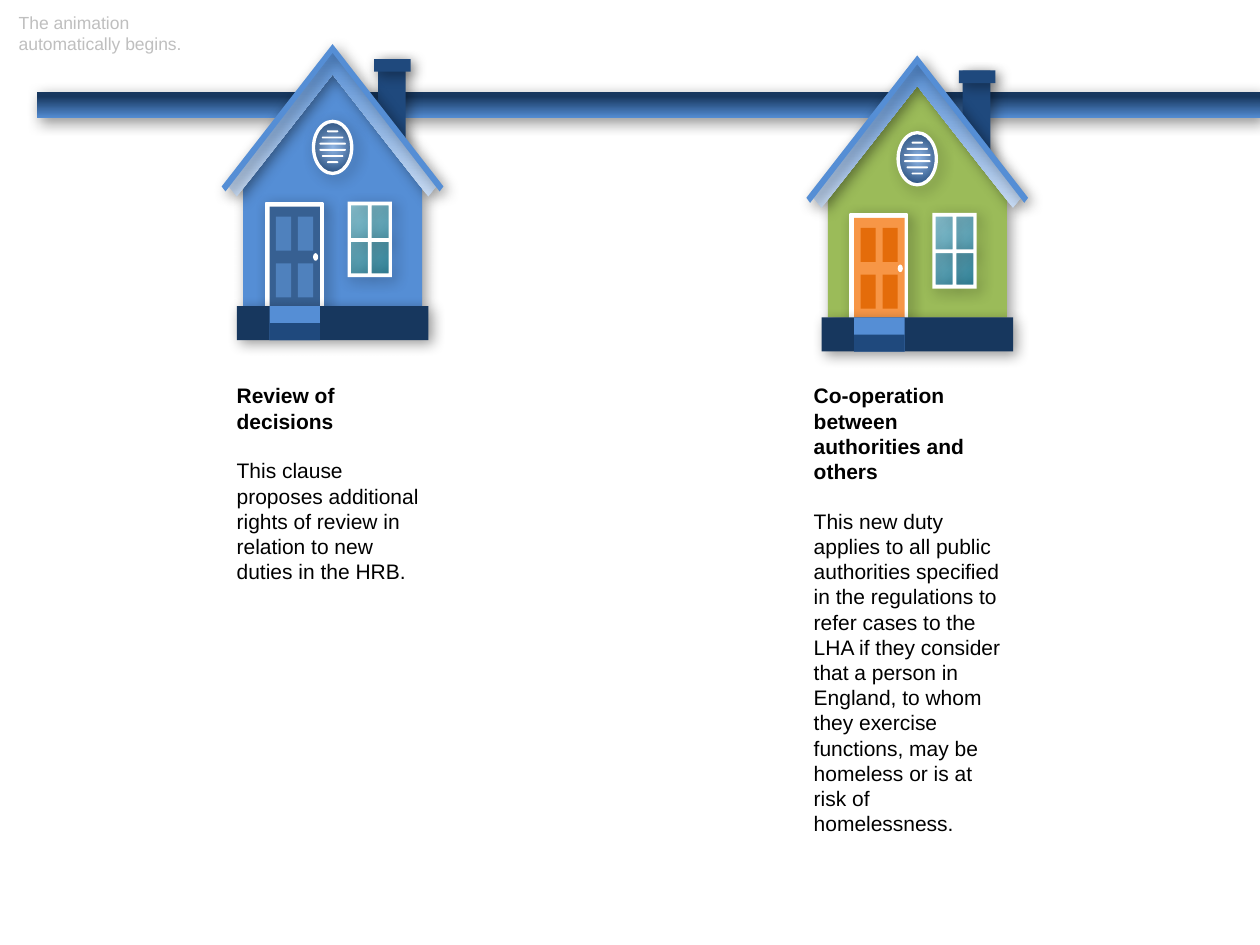
import pptx
import pptx.util
import pptx.dml.color
import pptx.enum.shapes
import pptx.enum.text
import pptx.oxml
import pptx.oxml.ns

RGB = pptx.dml.color.RGBColor
MSO = pptx.enum.shapes.MSO_SHAPE
RECT, OVAL = MSO.RECTANGLE, MSO.OVAL
WHITE = RGB(0xFF, 0xFF, 0xFF)
BLACK = RGB(0x00, 0x00, 0x00)
GREY = RGB(0xBF, 0xBF, 0xBF)
NAVY = RGB(0x17, 0x37, 0x5E)
DARK = RGB(0x1F, 0x49, 0x7D)
BLUE = RGB(0x55, 0x8E, 0xD5)
PALE = RGB(0xC6, 0xD9, 0xF1)
VENT = RGB(0x8E, 0xB4, 0xE3)
GLASS = RGB(0x93, 0xCD, 0xDD)
TEAL = RGB(0x31, 0x85, 0x9C)
GREEN = RGB(0x9B, 0xBB, 0x59)
ORANGE = RGB(0xF7, 0x96, 0x46)
RUST = RGB(0xE4, 0x6C, 0x0A)
STEEL = RGB(0x37, 0x60, 0x92)
SKY = RGB(0x4F, 0x81, 0xBD)

prs = pptx.Presentation()
prs.slide_width = pptx.util.Inches(10)
prs.slide_height = pptx.util.Inches(7.5)
s = prs.slides.add_slide(prs.slide_layouts[6])

# Grid: 1000 columns by 750 rows
COL = prs.slide_width / 1000
ROW = prs.slide_height / 750

A = 'xmlns:a="http://schemas.openxmlformats.org/drawingml/2006/main"'
SHADOW = (f'<a:outerShdw {A} blurRad="101600" dist="38100" dir="2700000" algn="tl" rotWithShape="0">'
          '<a:srgbClr val="000000"><a:alpha val="40000"/></a:srgbClr></a:outerShdw>')
RADIAL = (f'<a:path {A} path="circle">'
          '<a:fillToRect l="50000" t="50000" r="50000" b="50000"/></a:path>')


def draw(shapes, kind, geo, fill, shadow=False, x0=0, y0=0):
    """Draw a preset (left, top, width, height) or, with kind None, a list of outlines.

    A gradient fill is (first colour, last colour, last position, angle or None for radial).
    """
    if kind is None:
        outlines = [[(round((x0 + x) * COL), round((y0 + y) * ROW)) for x, y in o] for o in geo]
        fb = shapes.build_freeform(*outlines[0][0])
        for i, points in enumerate(outlines):
            if i:
                fb.move_to(*points[0])
            fb.add_line_segments(points[1:], close=True)
        sp = fb.convert_to_shape()
    else:
        x, y, w, h = geo
        sp = shapes.add_shape(kind, round((x0 + x) * COL), round((y0 + y) * ROW),
                              round(w * COL), round(h * ROW))
    if isinstance(fill, RGB):
        sp.fill.solid()
        sp.fill.fore_color.rgb = fill
    else:
        first, last, end, angle = fill
        sp.fill.gradient()
        for stop, colour, pos in zip(sp.fill.gradient_stops, (first, last), (0, end)):
            stop.color.rgb, stop.position = colour, pos
        if angle is None:
            lin = sp._element.spPr.find(".//" + pptx.oxml.ns.qn("a:lin"))
            lin.getparent().replace(lin, pptx.oxml.parse_xml(RADIAL))
        else:
            sp.fill.gradient_angle = angle
    sp.line.fill.background()
    sp.shadow.inherit = False
    if shadow:
        effects = sp._element.spPr.find(pptx.oxml.ns.qn("a:effectLst"))
        effects.append(pptx.oxml.parse_xml(SHADOW))
    return sp


# Bar behind the houses
draw(s.shapes, RECT, (29, 73, 971, 21), (BLUE, NAVY, 0.83, 90), True)

# Houses, measured from the top of the roof
wall_outline = [(0, 18), (-71, 108), (-71, 208), (71, 208), (71, 108)]
eaves_outline = [(76, 121), (0, 24), (-76, 121), (-83, 112), (0, 6), (83, 112)]
roof_outline = [(85, 117), (0, 7), (-85, 117), (-88, 113), (0, 0), (88, 113)]
window_outlines = [[(l, t), (r, t), (r, b), (l, b)] for l, t, r, b in
                   [(12, 125, 47, 185)] + [(l, t, l + 13.5, t + h) for l in (14.5, 31)
                                           for t, h in ((128, 26), (157, 25))]]

for x0, y0, wall, door, panel in ((728, 44, GREEN, ORANGE, RUST), (264, 35, BLUE, STEEL, SKY)):
    house = s.shapes.add_group_shape().shapes
    at = {"x0": x0, "y0": y0}

    # Chimney and wall
    draw(house, RECT, (36, 12, 22, 72), DARK, True, **at)
    draw(house, RECT, (33, 12, 29, 10), DARK, True, **at)
    draw(house, None, [wall_outline], wall, True, **at)

    # Door
    sp = draw(house, MSO.FRAME, (-53, 126, 45, 87), WHITE, True, **at)
    sp.adjustments[0] = 0.06
    sp.line.color.rgb = WHITE
    sp.line.width = pptx.util.Pt(1.25)
    draw(house, RECT, (-50, 129, 40, 80), door, **at)
    for y in (137, 174):
        for x in (-45, -27.5):
            draw(house, RECT, (x, y, 12, 27), panel, **at)
    draw(house, OVAL, (-15.5, 166, 4, 6), WHITE, **at)

    # Roof
    draw(house, None, [eaves_outline], (PALE, BLUE, 1, 90), True, **at)
    draw(house, None, [roof_outline], BLUE, True, **at)

    # Vent
    draw(house, OVAL, (-15.5, 61, 31, 41), (VENT, DARK, 1, None), **at)
    sp = draw(house, MSO.DONUT, (-16.5, 60, 33, 44), WHITE, True, **at)
    sp.adjustments[0] = 0.08
    for i, w in enumerate((9, 17, 21, 21, 17, 9)):
        sp = draw(house, MSO.ROUNDED_RECTANGLE, (-w / 2, 68.5 + 4.9 * i, w, 1.5), WHITE, **at)
        sp.adjustments[0] = 0.5

    # Window
    draw(house, RECT, (13, 127, 33, 57), (GLASS, TEAL, 1, 315), **at)
    draw(house, None, window_outlines, WHITE, True, **at)

    # Base and steps
    draw(house, RECT, (-76, 208, 152, 27), NAVY, True, **at)
    draw(house, RECT, (-50, 208, 40, 27), BLUE, **at)
    draw(house, RECT, (-50, 221.5, 40, 13.5), DARK, **at)

# Texts: place, size, colour, then (text, bold, points before) per paragraph
texts = [
    ((636, 299, 175, 333), 12, BLACK, [
        ("Co-operation between authorities and others", True, 0),
        ("This new duty applies to all public authorities specified in the regulations to refer "
         "cases to the LHA if they consider that a person in England, to whom they exercise "
         "functions, may be homeless or is at risk of homelessness.", False, 14)]),
    ((178, 299, 175, 151), 12, BLACK, [
        ("Review of decisions", True, 0),
        ("This clause proposes additional rights of review in relation to new duties in the HRB.",
         False, 14)]),
    ((5, 5, 159, 44), 10, GREY, [
        ("The animation", False, 0),
        ("automatically begins.", False, 0)]),
]
for (x, y, w, h), size, colour, paragraphs in texts:
    tf = s.shapes.add_textbox(round(x * COL), round(y * ROW), round(w * COL), round(h * ROW)).text_frame
    tf.word_wrap = True
    tf.auto_size = pptx.enum.text.MSO_AUTO_SIZE.SHAPE_TO_FIT_TEXT
    for i, (text, bold, before) in enumerate(paragraphs):
        p = tf.add_paragraph() if i else tf.paragraphs[0]
        if before:
            p.space_before = pptx.util.Pt(before)
        r = p.add_run()
        r.text = text
        for name, value in {"name": "Arial", "size": pptx.util.Pt(size), "bold": bold}.items():
            setattr(r.font, name, value)
        r.font.color.rgb = colour

prs.save("out.pptx")
